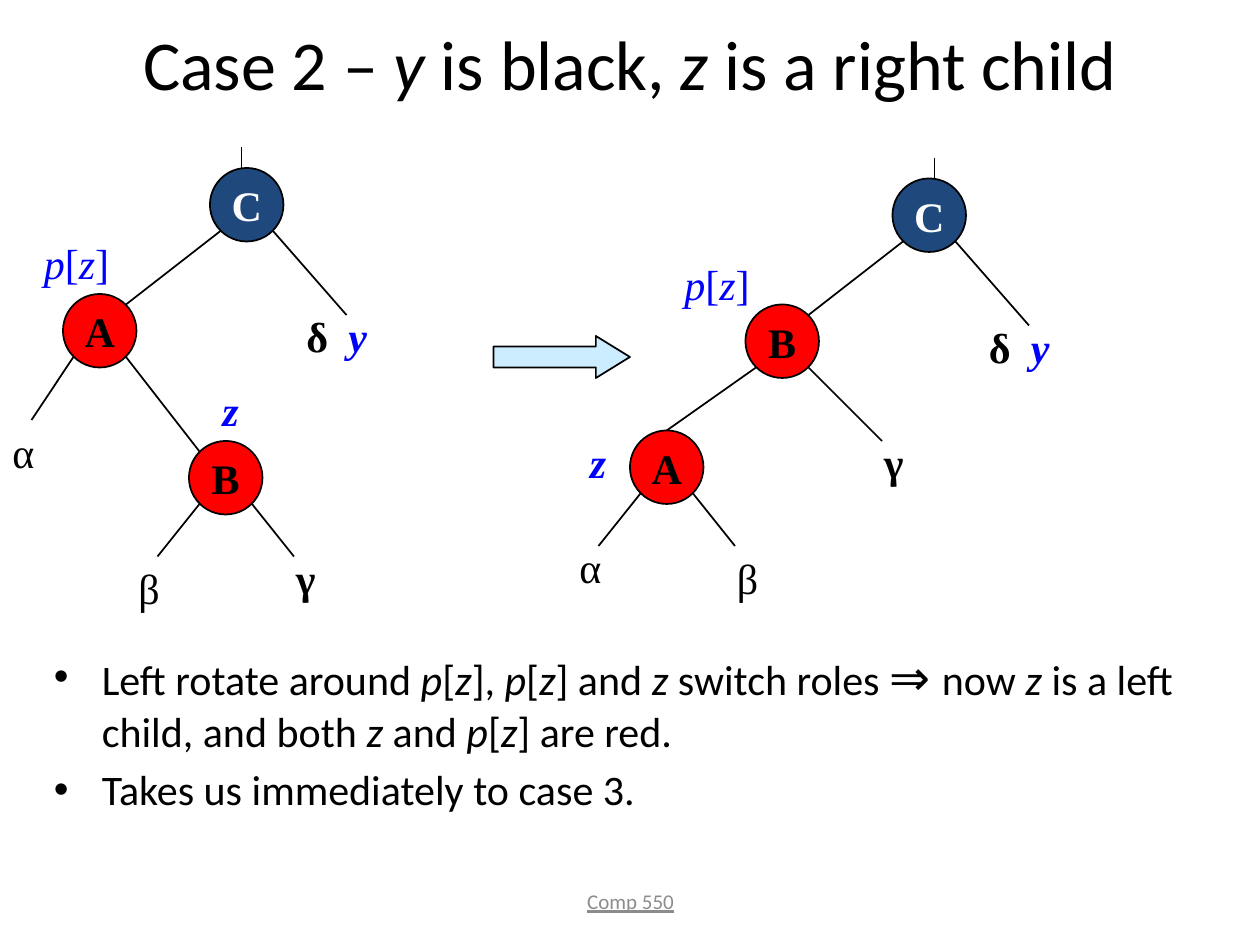
from dataclasses import dataclass

from lxml import etree
from pptx import Presentation
from pptx.dml.color import RGBColor
from pptx.enum import shapes, text
from pptx.oxml import ns
from pptx.util import Inches, Pt

UNIT = 1 / 12  # one grid step, in inches
NODE_SIZE = 7  # node diameter in grid steps
BLACK, WHITE, RED, NAVY = "000000", "FFFFFF", "FF0000", "1F497D"
BLUE, PALE_BLUE, GREY = "0000FF", "CCECFF", "8C8C8C"
SERIF, SANS = "Times New Roman", "Calibri"


@dataclass
class Node:
    name: str
    column: float
    row: float


@dataclass
class Label:
    words: str  # italic parts stand between asterisks
    column: float
    row: float
    width: float  # inches
    bold: bool = False
    color: str = BLACK


@dataclass
class Tree:
    nodes: list[Node]
    edges: list[tuple[float, float, float, float]]  # from column, row to column, row
    labels: list[Label]


def grid(steps: float) -> int:
    return Inches(steps * UNIT)


def rgb(color: str) -> RGBColor:
    return RGBColor.from_string(color)


def style(paragraph, size: float, color: str = BLACK, name: str = SANS, bold: bool = False) -> None:
    font = paragraph.font
    font.size, font.name, font.bold = Pt(size), name, bold
    font.color.rgb = rgb(color)


def add_words(paragraph, words: str) -> None:
    """Add runs; every second part between asterisks is italic."""
    for index, part in enumerate(words.split("*")):
        if part:
            run = paragraph.add_run()
            run.text = part
            run.font.italic = index % 2 == 1


def add_bullet(paragraph) -> None:
    properties = paragraph._p.get_or_add_pPr()
    properties.set("marL", str(Inches(0.38)))
    properties.set("indent", str(-Inches(0.38)))
    font = etree.SubElement(properties, ns.qn("a:buFont"))
    font.set("typeface", "Arial")
    etree.SubElement(properties, ns.qn("a:buChar")).set("char", "•")


def paint(shape, fill: str) -> None:
    shape.shadow.inherit = False
    shape.fill.solid()
    shape.fill.fore_color.rgb = rgb(fill)
    shape.line.color.rgb = rgb(BLACK)
    shape.line.width = Pt(1)


def draw_edge(slide, edge: tuple[float, float, float, float]) -> None:
    line = slide.shapes.add_connector(shapes.MSO_CONNECTOR.STRAIGHT, *map(grid, edge))
    line.line.color.rgb = rgb(BLACK)
    line.line.width = Pt(1)
    etree.SubElement(line._element.spPr, ns.qn("a:effectLst"))


def draw_node(slide, node: Node) -> None:
    is_root = node.name == "C"
    circle = slide.shapes.add_shape(
        shapes.MSO_SHAPE.OVAL, *map(grid, (node.column, node.row, NODE_SIZE, NODE_SIZE)))
    paint(circle, NAVY if is_root else RED)
    frame = circle.text_frame
    frame.word_wrap = False
    frame.vertical_anchor = text.MSO_ANCHOR.MIDDLE
    paragraph = frame.paragraphs[0]
    paragraph.alignment = text.PP_ALIGN.CENTER
    add_words(paragraph, node.name)
    style(paragraph, 24, WHITE if is_root else BLACK, SERIF, bold=True)


def draw_label(slide, label: Label) -> None:
    box = slide.shapes.add_textbox(
        grid(label.column), grid(label.row), Inches(label.width), Inches(0.5))
    box.text_frame.word_wrap = False
    paragraph = box.text_frame.paragraphs[0]
    add_words(paragraph, label.words)
    style(paragraph, 24, label.color, SERIF, label.bold)


def draw_tree(slide, tree: Tree) -> None:
    for node in tree.nodes:
        draw_node(slide, node)
    for edge in tree.edges:
        draw_edge(slide, edge)
    for label in tree.labels:
        draw_label(slide, label)


BEFORE = Tree(
    nodes=[Node("C", 20, 16), Node("A", 6, 28), Node("B", 18, 42)],
    edges=[(23, 14, 23, 16), (21, 22, 12, 29), (26, 22, 33, 30), (12, 34, 19, 43),
           (7, 34, 3, 40), (19, 48, 15, 53), (24, 48, 28, 53)],
    labels=[Label("α", 0, 40, 0.41), Label("β", 12, 53, 0.38),
            Label("γ", 27, 52, 0.41, True), Label("δ", 28, 29, 0.37, True),
            Label("*z*", 20, 36, 0.33, True, BLUE), Label("*y*", 32, 29, 0.35, True, BLUE),
            Label("*p*[*z*]", 3, 22, 0.72, color=BLUE)],
)
AFTER = Tree(
    nodes=[Node("C", 85, 17), Node("B", 71, 29), Node("A", 60, 41)],
    edges=[(89, 15, 89, 17), (86, 23, 77, 30), (91, 23, 98, 31), (72, 35, 63.5, 41),
           (77, 35, 84, 42), (61, 47, 57, 52), (66, 47, 70, 52)],
    labels=[Label("α", 54, 51, 0.41), Label("β", 69, 52, 0.38),
            Label("γ", 83, 41, 0.41, True), Label("δ", 93, 30, 0.37, True),
            Label("*z*", 55, 41, 0.33, True, BLUE), Label("*y*", 97, 30, 0.35, True, BLUE),
            Label("*p*[*z*]", 64, 24, 0.72, color=BLUE)],
)


def main() -> None:
    presentation = Presentation()
    presentation.slide_width, presentation.slide_height = Inches(10), Inches(7.5)
    slide = presentation.slides.add_slide(presentation.slide_layouts[5])

    # Title
    title = slide.shapes.title
    title.left, title.top, title.width, title.height = 0, 0, Inches(10), Inches(1)
    title.text_frame.vertical_anchor = text.MSO_ANCHOR.MIDDLE
    paragraph = title.text_frame.paragraphs[0]
    paragraph.alignment = text.PP_ALIGN.CENTER
    add_words(paragraph, "Case 2 – *y *is black, *z* is a right child")
    style(paragraph, 40)

    # Explanation
    body = slide.shapes.add_textbox(Inches(0.33), Inches(5.08), Inches(9.25), Inches(2.5))
    frame = body.text_frame
    frame.word_wrap = True
    rotation, result = frame.paragraphs[0], frame.add_paragraph()
    add_words(rotation, "Left rotate around *p*[*z*], *p*[*z*] and *z* switch roles ")
    for symbol, size, name in (("⇒", 28, SANS), (" ", 24, "Arial")):
        run = rotation.add_run()
        run.text, run.font.size, run.font.name = symbol, Pt(size), name
    add_words(rotation, "now *z *is a left child, and both *z *and *p*[*z*] are red.")
    add_words(result, "Takes us immediately to case 3.")
    for paragraph in (rotation, result):
        paragraph.space_before = Pt(4.8)
        add_bullet(paragraph)
        style(paragraph, 24)

    # Footer
    footer = slide.shapes.add_textbox(Inches(3.42), Inches(6.95), Inches(3.17), Inches(0.4))
    footer.text_frame.word_wrap = True
    footer.text_frame.vertical_anchor = text.MSO_ANCHOR.MIDDLE
    paragraph = footer.text_frame.paragraphs[0]
    paragraph.alignment = text.PP_ALIGN.CENTER
    add_words(paragraph, "Comp 550")
    style(paragraph, 12, GREY)
    paragraph.font.underline = True

    # Trees before and after the rotation, with the arrow between them
    draw_tree(slide, BEFORE)
    arrow = slide.shapes.add_shape(
        shapes.MSO_SHAPE.RIGHT_ARROW, *map(grid, (47, 32, 13, 4)))
    arrow.adjustments[0], arrow.adjustments[1] = 0.5, 0.81
    paint(arrow, PALE_BLUE)
    draw_tree(slide, AFTER)

    presentation.save("out.pptx")


if __name__ == "__main__":
    main()
